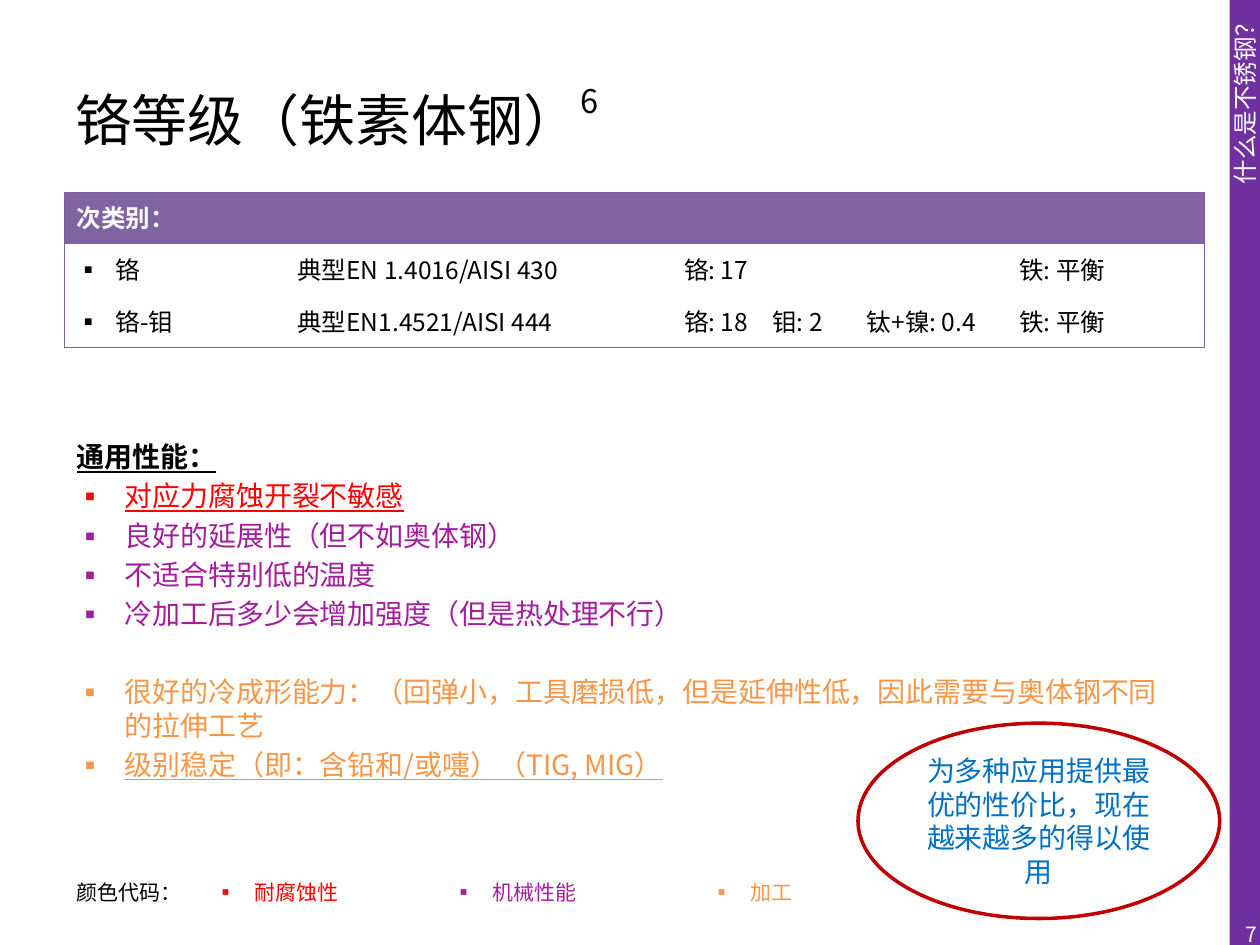
from dataclasses import dataclass
from typing import Optional

import pptx
import pptx.dml.color
import pptx.enum.shapes
import pptx.enum.text
import pptx.oxml
import pptx.oxml.ns
import pptx.util
from pptx.dml.color import RGBColor

BLACK = RGBColor(0x00, 0x00, 0x00)
WHITE = RGBColor(0xFF, 0xFF, 0xFF)
BAND_PURPLE = RGBColor(0x70, 0x30, 0xA0)
HEADER_PURPLE = RGBColor(0x80, 0x64, 0xA2)
BORDER_PURPLE = RGBColor(0x7D, 0x60, 0xA0)
CORROSION_RED = RGBColor(0xFF, 0x00, 0x00)
MECHANICAL_VIOLET = RGBColor(0xA2, 0x1E, 0x9C)
PROCESSING_ORANGE = RGBColor(0xF7, 0x96, 0x46)
RING_RED = RGBColor(0xC0, 0x00, 0x00)
REMARK_BLUE = RGBColor(0x00, 0x70, 0xC0)

CJK_FONT = "Noto Sans CJK SC"
PLAIN_TABLE_STYLE = "{2D5ABB26-0587-4C30-8999-92F81FD0307C}"
SLIDE_WIDTH = pptx.util.Inches(10)
SLIDE_HEIGHT = pptx.util.Inches(7.5)
ROW_HEIGHT = 5.47
ALIGN = pptx.enum.text.PP_ALIGN
MIDDLE = pptx.enum.text.MSO_ANCHOR.MIDDLE


@dataclass(frozen=True)
class Line:
    text: str
    size: float
    color: RGBColor = BLACK
    bold: bool = False
    underline: bool = False
    indent: float = 0
    before: float = 0
    align: Optional[ALIGN] = None
    font: str = CJK_FONT


@dataclass(frozen=True)
class Cell:
    row: int
    column: int
    line: Line
    span: int = 1
    tight: bool = False


def across(percent: float) -> int:
    return round(SLIDE_WIDTH * percent / 100)


def down(percent: float) -> int:
    return round(SLIDE_HEIGHT * percent / 100)


def area(left: float, top: float, width: float, height: float) -> tuple:
    """Turn percentages of the slide into a position and size."""
    return across(left), down(top), across(width), down(height)


def move(shape, box: tuple) -> None:
    shape.left, shape.top, shape.width, shape.height = box


def element(xml: str):
    tag, _, rest = xml.partition(" ")
    return pptx.oxml.parse_xml(f"<a:{tag} {pptx.oxml.ns.nsdecls('a')} {rest}")


def write(paragraph, line: Line) -> None:
    paragraph.text = line.text
    paragraph.alignment = line.align
    paragraph.space_before = pptx.util.Pt(line.before)
    font = paragraph.font
    font.name, font.size = line.font, pptx.util.Pt(line.size)
    font.bold, font.underline = line.bold, line.underline
    font.color.rgb = line.color
    properties = paragraph._p.get_or_add_pPr()
    latin = properties.find(".//" + pptx.oxml.ns.qn("a:latin"))
    latin.addnext(element(f'ea typeface="{CJK_FONT}"/>'))

    indent = pptx.util.Inches(line.indent)
    properties.set("marL", str(indent))
    properties.set("indent", str(-indent))
    if line.indent:
        marks = [f'buClr ><a:srgbClr val="{line.color}"/></a:buClr>',
                 f'buFont typeface="{CJK_FONT}"/>', 'buChar char="▪"/>']
    else:
        marks = ["buNone />"]
    for mark in marks:
        properties.insert_element_before(element(mark), "a:tabLst", "a:defRPr", "a:extLst")


def fill_frame(frame, lines: list[Line], anchor=None) -> None:
    frame.word_wrap = True
    frame.auto_size = pptx.enum.text.MSO_AUTO_SIZE.NONE
    if anchor is not None:
        frame.vertical_anchor = anchor
    for index, line in enumerate(lines):
        write(frame.add_paragraph() if index else frame.paragraphs[0], line)


def add_shape(slide, kind, box: tuple):
    shape = slide.shapes.add_shape(kind, *box)
    shape.shadow.inherit = False
    return shape


def add_grid(slide, left: float, top: float, widths: list[float], rows: int,
             cells: list[Cell]):
    box = area(left, top, sum(widths), rows * ROW_HEIGHT)
    table = slide.shapes.add_table(rows, len(widths), *box).table
    table.first_row = table.horz_banding = False
    properties = table._tbl.tblPr
    properties.find(pptx.oxml.ns.qn("a:tableStyleId")).text = PLAIN_TABLE_STYLE
    for column, width in zip(table.columns, widths):
        column.width = across(width)
    for cell in table.iter_cells():
        cell.fill.background()
    for item in cells:
        cell = table.cell(item.row, item.column)
        if item.span > 1:
            cell.merge(table.cell(item.row, item.column + item.span - 1))
        if item.tight:
            cell.margin_left = cell.margin_right = pptx.util.Inches(0.05)
        write(cell.text_frame.paragraphs[0], item.line)
    return table


def outline(table) -> None:
    """Draw a border around the outside of the whole table."""
    last_row, last_column = len(table.rows) - 1, len(table.columns) - 1
    for row in range(last_row + 1):
        for column in range(last_column + 1):
            edges = {"lnL": column == 0, "lnR": column == last_column or row == 0,
                     "lnT": row == 0, "lnB": row == last_row}
            properties = table.cell(row, column)._tc.get_or_add_tcPr()
            for edge in reversed([name for name, drawn in edges.items() if drawn]):
                properties.insert(0, element(
                    f'{edge} w="{pptx.util.Pt(0.75)}"><a:solidFill>'
                    f'<a:srgbClr val="{BORDER_PURPLE}"/></a:solidFill></a:{edge}>'))


def grade_cells() -> list[Cell]:
    cells = [Cell(0, 0, Line("次类别：", 14, WHITE, bold=True), span=7)]
    grades = [("铬", "典型EN 1.4016/AISI 430", "铬: 17"),
              ("铬-钼", "典型EN1.4521/AISI 444", "铬: 18")]
    for row, (grade, standard, chromium) in enumerate(grades, start=1):
        cells += [Cell(row, 0, Line(grade, 14, indent=0.31)),
                  Cell(row, 1, Line(standard, 14)),
                  Cell(row, 2, Line(chromium, 14), tight=True),
                  Cell(row, 6, Line("铁: 平衡", 14))]
    return cells + [Cell(2, 3, Line("钼: 2", 14), tight=True),
                    Cell(2, 4, Line("钛+镍: 0.4", 14), span=2, tight=True)]


def property_line(text: str, color: RGBColor, underline=False, before=3.2) -> Line:
    return Line(text, 16, color, underline=underline, indent=0.38, before=before)


def main() -> None:
    deck = pptx.Presentation()
    deck.slide_width, deck.slide_height = SLIDE_WIDTH, SLIDE_HEIGHT
    slide = deck.slides.add_slide(deck.slide_layouts[1])
    presets = pptx.enum.shapes.MSO_SHAPE

    band = add_shape(slide, presets.RECTANGLE, area(97.6, 0, 2.4, 100))
    band.fill.solid()
    band.fill.fore_color.rgb = BAND_PURPLE
    band.line.fill.background()
    fill_frame(band.text_frame, [Line("什么是不锈钢？", 14, WHITE, align=ALIGN.RIGHT)], MIDDLE)
    band.text_frame._txBody.bodyPr.set("vert", "vert270")

    title = slide.shapes.title
    move(title, area(5, 4, 90, 16.67))
    fill_frame(title.text_frame,
               [Line("铬等级（铁素体钢）", 32, align=ALIGN.JUSTIFY)], MIDDLE)
    footnote = title.text_frame.paragraphs[0].add_run()
    footnote.text = "6"
    footnote.font._element.set("baseline", "50000")

    body = slide.placeholders[1]
    move(body, area(5.1, 45.87, 90, 44.13))
    fill_frame(body.text_frame, [
        Line("通用性能：", 16, bold=True, underline=True, before=3.2),
        property_line("对应力腐蚀开裂不敏感", CORROSION_RED, underline=True),
        property_line("良好的延展性（但不如奥体钢）", MECHANICAL_VIOLET),
        property_line("不适合特别低的温度", MECHANICAL_VIOLET),
        property_line("冷加工后多少会增加强度（但是热处理不行）", MECHANICAL_VIOLET),
        property_line("很好的冷成形能力：（回弹小，工具磨损低，但是延伸性低，"
                      "因此需要与奥体钢不同的拉伸工艺", PROCESSING_ORANGE, before=25.5),
        property_line("级别稳定（即：含铅和/或嚏）（TIG, MIG）", PROCESSING_ORANGE, underline=True),
    ])

    page_number = slide.shapes.add_textbox(*area(96.5, 96.13, 4.3, 5.33))
    fill_frame(page_number.text_frame, [Line("7", 12, WHITE, align=ALIGN.RIGHT)], MIDDLE)

    grades = add_grid(slide, 5.1, 20.4, [17.5, 31.2, 7, 7.5, 6, 5.6, 15.7], 3, grade_cells())
    header = grades.cell(0, 0)
    header.fill.solid()
    header.fill.fore_color.rgb = HEADER_PURPLE
    outline(grades)

    legend = [("耐腐蚀性", CORROSION_RED), ("机械性能", MECHANICAL_VIOLET),
              ("加工", PROCESSING_ORANGE)]
    add_grid(slide, 5.1, 92, [11, 18.9, 20.5, 34.6], 1,
             [Cell(0, 0, Line("颜色代码：", 12, font="Calibri"))]
             + [Cell(0, column, Line(text, 12, color, indent=0.31, font="Calibri"))
                for column, (text, color) in enumerate(legend, start=1)])

    remark = add_shape(slide, presets.OVAL, area(68.1, 76.53, 28.7, 20.67))
    remark.fill.background()
    remark.line.color.rgb = RING_RED
    remark.line.width = pptx.util.Pt(2)
    fill_frame(remark.text_frame, [Line("为多种应用提供最优的性价比，现在越来越多的得以使用",
                                        16, REMARK_BLUE, align=ALIGN.CENTER)], MIDDLE)

    deck.save("out.pptx")


if __name__ == "__main__":
    main()
